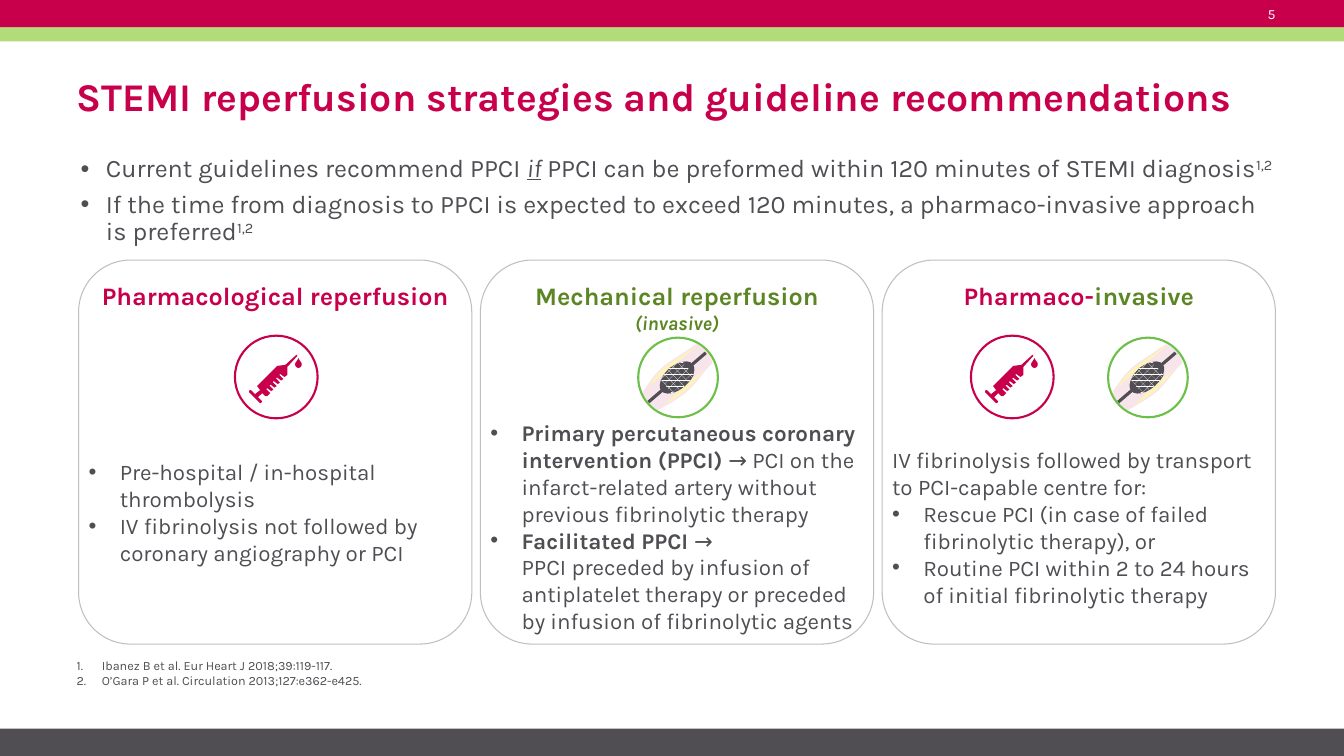
from dataclasses import dataclass, field
from typing import Callable

from lxml import etree
from pptx import Presentation
from pptx.dml.color import RGBColor
from pptx.enum.dml import MSO_PATTERN
from pptx.enum.shapes import MSO_CONNECTOR, MSO_SHAPE
from pptx.enum.text import MSO_ANCHOR, PP_ALIGN
from pptx.oxml.ns import qn
from pptx.util import Inches, Pt

RECT, ROUND, OVAL = MSO_SHAPE.RECTANGLE, MSO_SHAPE.ROUNDED_RECTANGLE, MSO_SHAPE.OVAL
TOP, MIDDLE = MSO_ANCHOR.TOP, MSO_ANCHOR.MIDDLE
LEFT, CENTER, RIGHT = PP_ALIGN.LEFT, PP_ALIGN.CENTER, PP_ALIGN.RIGHT
STRAIGHT, MESH = MSO_CONNECTOR.STRAIGHT, MSO_PATTERN.PERCENT_60

FONT = "Karla"
COLOURS = {
    "crimson": "C8004C", "lime": "B1DC79", "slate": "504E53", "ink": "504D53",
    "olive": "5C8624", "leaf": "6CC04A", "border": "BFBFBF", "cream": "FEF4B8",
    "blush": "F8E5EC", "white": "FFFFFF",
}
CARD_LEFT, CARD_STEP, CARD_WIDTH = 0.78, 3.985, 3.9
CARD_TOP, CARD_HEIGHT = 2.58, 3.81
CURVE_STEPS = 8

# Icon outlines, from each icon's corner: a pair is a line, six numbers a curve
SYRINGE = [(0.27, 0.65), (0.23, 0.61), (0.27, 0.57), (0.30, 0.60), (0.32, 0.60)]
for notch in range(5):
    x, y = 0.35 + 0.0325 * notch, 0.57 - 0.035 * notch
    SYRINGE += [(x, y), (x - 0.04, y - 0.04), (x - 0.03, y - 0.05), (x + 0.01, y - 0.02)]
SYRINGE += [(0.52, 0.39), (0.52, 0.31), (0.62, 0.20), (0.61, 0.19), (0.50, 0.29),
            (0.42, 0.30), (0.22, 0.50), (0.25, 0.54), (0.20, 0.58), (0.16, 0.54),
            (0.15, 0.54), (0.14, 0.55), (0.14, 0.56), (0.25, 0.67), (0.26, 0.67)]
DROP = [(0.66, 0.27), (0.63, 0.23, 0.63, 0.22, 0.63, 0.22),
        (0.63, 0.22, 0.63, 0.23, 0.60, 0.27), (0.59, 0.30, 0.61, 0.32, 0.63, 0.32),
        (0.65, 0.32, 0.67, 0.30, 0.66, 0.27)]
VESSEL = [(0.58, 0.07), (0.59, 0.08), (0.65, 0.11, 0.69, 0.15, 0.72, 0.21), (0.73, 0.25),
          (0.64, 0.33, 0.58, 0.44, 0.49, 0.52), (0.40, 0.60, 0.30, 0.65, 0.20, 0.71),
          (0.18, 0.70), (0.13, 0.67, 0.08, 0.63, 0.06, 0.57), (0.05, 0.54),
          (0.09, 0.49, 0.18, 0.34, 0.28, 0.27)]
LUMEN = [(0.59, 0.09), (0.61, 0.11), (0.66, 0.13, 0.69, 0.16, 0.70, 0.20), (0.71, 0.26),
         (0.62, 0.33, 0.54, 0.40, 0.45, 0.48), (0.36, 0.55, 0.29, 0.64, 0.19, 0.71),
         (0.16, 0.68), (0.12, 0.67, 0.09, 0.64, 0.08, 0.60), (0.05, 0.55),
         (0.09, 0.50, 0.22, 0.40, 0.31, 0.32), (0.41, 0.24, 0.50, 0.16, 0.59, 0.09)]
STENT_MESH = [(0.44, 0.24), (0.55, 0.37), (0.52, 0.42), (0.46, 0.48), (0.40, 0.52),
              (0.33, 0.55), (0.23, 0.42), (0.26, 0.36), (0.31, 0.30), (0.38, 0.26)]


@dataclass
class Span:
    text: str
    colour: str = "ink"
    size: float = 16
    style: dict = field(default_factory=dict)
    raised: bool = False


@dataclass
class Para:
    spans: list[Span]
    bullet: str = ""
    indent: float = 0.31
    style: dict = field(default_factory=dict)


@dataclass
class Card:
    heading: list[Span]
    icons: list[tuple[Callable, float, float]]
    text_top: float
    text_height: float
    paras: list[Para]


def rgb(name: str) -> RGBColor:
    return RGBColor.from_string(COLOURS[name])


def write(frame, paras: list[Para], anchor=TOP, insets=(0, 0, 0, 0)) -> None:
    frame.word_wrap, frame.vertical_anchor = True, anchor
    for side, inset in zip(("left", "top", "right", "bottom"), insets):
        setattr(frame, f"margin_{side}", Inches(inset))
    for index, item in enumerate(paras):
        para = frame.add_paragraph() if index else frame.paragraphs[0]
        for name, value in item.style.items():
            setattr(para, name, value)
        if item.bullet:
            props = para._p.get_or_add_pPr()
            props.set("marL", str(Inches(item.indent)))
            props.set("indent", str(-Inches(item.indent)))
            if item.bullet == "1.":
                etree.SubElement(props, qn("a:buAutoNum"), type="arabicPeriod")
            else:
                etree.SubElement(props, qn("a:buFont"), typeface="Arial")
                etree.SubElement(props, qn("a:buChar"), char=item.bullet)
        for span in item.spans:
            for part, text in enumerate(span.text.split("\n")):
                if part:
                    para.add_line_break()
                run = para.add_run()
                run.text = text
                look = {"name": FONT, "size": Pt(span.size), **span.style}
                for name, value in look.items():
                    setattr(run.font, name, value)
                run.font.color.rgb = rgb(span.colour)
                if span.raised:
                    run.font._element.set("baseline", "30000")


def paint(shape, fill: str = "", line: str = "", width: float = 1):
    shape.shadow.inherit = False
    if fill:
        shape.fill.solid()
        shape.fill.fore_color.rgb = rgb(fill)
    else:
        shape.fill.background()
    if line:
        shape.line.color.rgb = rgb(line)
        shape.line.width = Pt(width)
    else:
        shape.line.fill.background()
    return shape


def add_box(shapes, kind, at: tuple, **look):
    return paint(shapes.add_shape(kind, *map(Inches, at)), **look)


def add_text(shapes, at: tuple, paras: list[Para], **layout) -> None:
    write(shapes.add_textbox(*map(Inches, at)).text_frame, paras, **layout)


def add_outline(shapes, left: float, top: float, outline: list[tuple], **look):
    points = [outline[0]]
    for step in outline[1:]:
        if len(step) == 2:
            points.append(step)
            continue
        knots = [points[-1], step[:2], step[2:4], step[4:]]
        for tick in range(1, CURVE_STEPS + 1):
            t = tick / CURVE_STEPS
            weights = ((1 - t) ** 3, 3 * t * (1 - t) ** 2, 3 * t * t * (1 - t), t ** 3)
            points.append(tuple(sum(w * k[axis] for w, k in zip(weights, knots))
                                for axis in (0, 1)))
    placed = [(Inches(left + x), Inches(top + y)) for x, y in points]
    builder = shapes.build_freeform(*placed[0])
    builder.add_line_segments(placed[1:], close=True)
    return paint(builder.convert_to_shape(), **look)


def add_syringe(shapes, left: float, top: float) -> None:
    add_box(shapes, OVAL, (left, top, 0.82, 0.82), fill="white", line="crimson", width=1.5)
    for outline in (SYRINGE, DROP):
        add_outline(shapes, left, top, outline, fill="crimson")


def add_stent(shapes, left: float, top: float) -> None:
    add_outline(shapes, left, top, VESSEL, fill="cream", line="blush")
    add_outline(shapes, left, top, LUMEN, fill="blush", line="blush")
    ends = (left + 0.10, top + 0.64, left + 0.67, top + 0.15)
    wire = shapes.add_connector(STRAIGHT, *map(Inches, ends))
    wire.line.color.rgb, wire.line.width = rgb("ink"), Pt(2.25)
    etree.SubElement(wire._element.spPr, qn("a:effectLst"))
    balloon = add_box(shapes, OVAL, (left + 0.27, top + 0.19, 0.23, 0.41), fill="ink")
    balloon.rotation = 49.1
    mesh = add_outline(shapes, left, top, STENT_MESH)
    mesh.fill.patterned()
    mesh.fill.pattern = MESH
    mesh.fill.fore_color.rgb, mesh.fill.back_color.rgb = rgb("white"), rgb("ink")
    add_box(shapes, OVAL, (left, top, 0.79, 0.79), line="leaf", width=1.5)


def add_card(page, left: float, card: Card) -> None:
    shapes = page.shapes.add_group_shape().shapes
    frame = add_box(shapes, ROUND, (left, CARD_TOP, CARD_WIDTH, CARD_HEIGHT),
                    line="border", width=0.75)
    frame.adjustments[0] = 0.135
    write(frame.text_frame, [Para(card.heading, style={"alignment": CENTER})],
          insets=(0.04, 0.05, 0.04, 0.05))
    for draw, icon_left, icon_top in card.icons:
        draw(shapes, icon_left, icon_top)
    add_text(shapes, (left, card.text_top, CARD_WIDTH, card.text_height), card.paras,
             insets=(0.1, 0.05, 0.1, 0.05))


BOLD = {"bold": True}
INTRO = {"line_spacing": 0.9, "space_before": Pt(6)}
CITED = Span("1,2", "slate", 18, raised=True)
GUIDELINES = [
    Para([Span("Current guidelines recommend PPCI ", "slate", 18),
          Span("if", "slate", 18, {"italic": True, "underline": True}),
          Span(" PPCI can be preformed within 120 minutes of STEMI diagnosis", "slate", 18),
          CITED], "•", 0.25, INTRO),
    Para([Span("If the time from diagnosis to PPCI is expected to exceed 120 minutes, "
               "a pharmaco-invasive approach is preferred", "slate", 18),
          CITED], "•", 0.25, INTRO),
]
REFERENCES = ["Ibanez B et al. Eur Heart J 2018;39:119-117.",
              "O’Gara P et al. Circulation 2013;127:e362-e425."]
CARDS = [
    Card([Span("Pharmacological reperfusion", "crimson", 18, BOLD)],
         [(add_syringe, 2.33, 3.33)], 4.5, 1.48,
         [Para([Span("Pre-hospital / in-hospital thrombolysis")], "•"),
          Para([Span("IV fibrinolysis not followed by coronary angiography or PCI")], "•")]),
    Card([Span("Mechanical reperfusion ", "olive", 18, BOLD),
          Span("(invasive)", "olive", 14, {"bold": True, "italic": True})],
         [(add_stent, 6.33, 3.35)], 4.11, 2.26,
         [Para([Span("Primary percutaneous coronary intervention (PPCI) ", style=BOLD),
                Span("→ PCI on the infarct-related artery without previous "
                     "fibrinolytic therapy")], "•"),
          Para([Span("Facilitated PPCI ", style=BOLD),
                Span("→\nPPCI preceded by infusion of antiplatelet therapy or preceded "
                     "by infusion of fibrinolytic agents")], "•")]),
    Card([Span("Pharmaco-", "crimson", 18, BOLD), Span("invasive", "olive", 18, BOLD)],
         [(add_syringe, 9.63, 3.33), (add_stent, 10.99, 3.35)], 4.38, 1.72,
         [Para([Span("IV fibrinolysis followed by transport to PCI-capable centre for:")]),
          Para([Span("Rescue PCI (in case of failed fibrinolytic therapy), or")], "•"),
          Para([Span("Routine PCI within 2 to 24 hours of initial fibrinolytic therapy")],
               "•")]),
]


def main() -> None:
    deck = Presentation()
    deck.slide_width, deck.slide_height = Inches(13.33), Inches(7.5)
    page = deck.slides.add_slide(deck.slide_layouts[5])

    # Header and footer bands
    for top, height, colour in ((0.27, 0.14, "lime"), (0, 0.27, "crimson"),
                                (7.23, 0.27, "slate")):
        add_box(page.shapes, RECT, (0, top, 13.33, height), fill=colour)
    add_text(page.shapes, (12.14, 0.05, 0.51, 0.17),
             [Para([Span("5", "white", 10)], style={"alignment": RIGHT})], anchor=MIDDLE)

    # Title
    title = page.shapes.title
    for name, value in zip(("left", "top", "width", "height"), (0.76, 0.49, 11.89, 0.98)):
        setattr(title, name, Inches(value))
    heading = Span("STEMI reperfusion strategies and guideline recommendations",
                   "crimson", 28, BOLD)
    write(title.text_frame, [Para([heading], style={"alignment": LEFT, "line_spacing": 0.9})],
          anchor=MIDDLE)

    # Guidelines, strategy cards and references
    add_text(page.shapes, (0.8, 1.55, 11.89, 1.03), GUIDELINES)
    for index, card in enumerate(CARDS):
        add_card(page, CARD_LEFT + CARD_STEP * index, card)
    add_text(page.shapes, (0.76, 6.47, 11.89, 0.7),
             [Para([Span(text, size=9)], "1.", 0.25) for text in REFERENCES],
             insets=(0, 0.06, 0, 0))

    deck.save("out.pptx")


if __name__ == "__main__":
    main()
